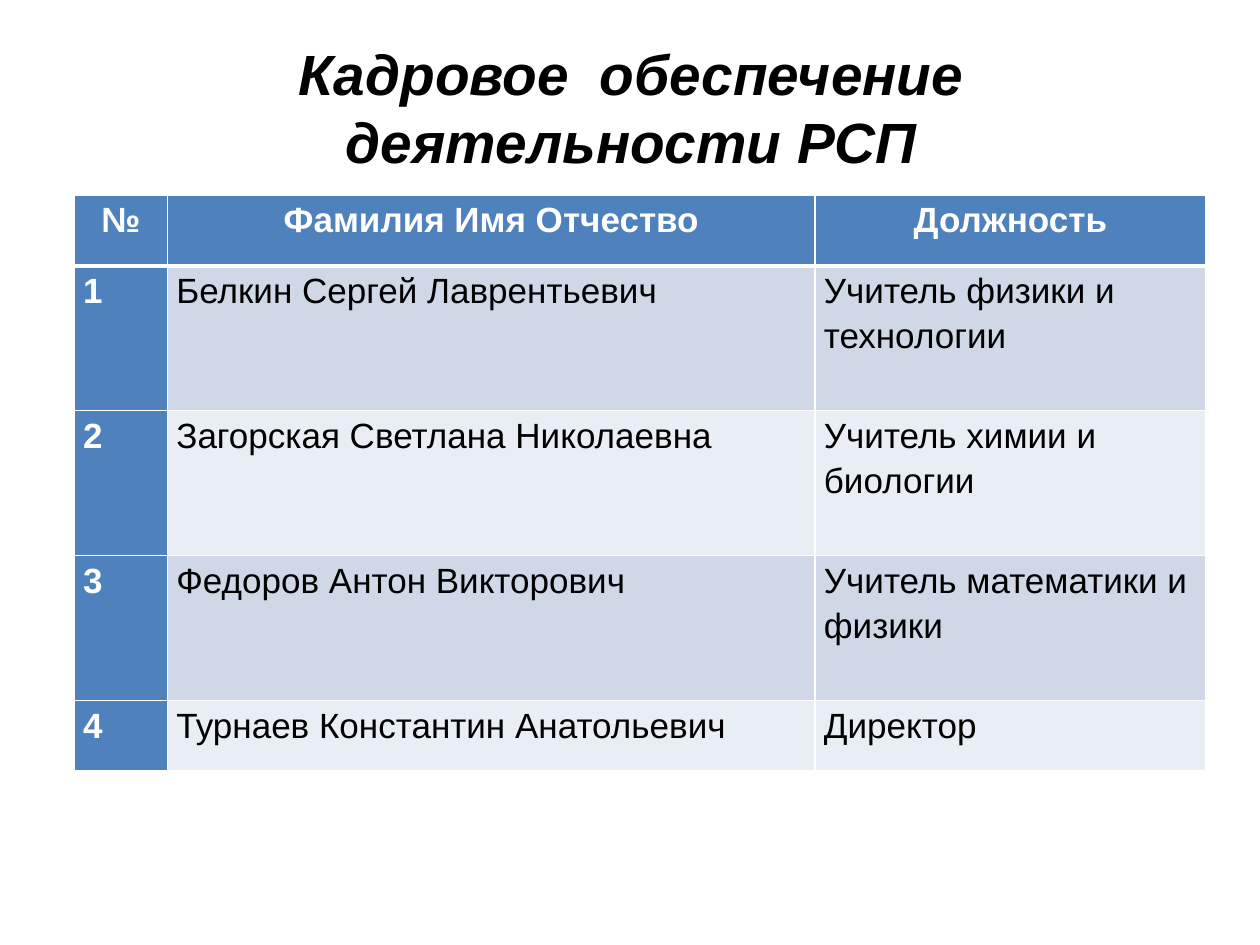
from dataclasses import dataclass
from lxml.etree import SubElement
from pptx import Presentation
from pptx.dml.color import RGBColor as RGB
from pptx.enum.text import MSO_ANCHOR as Anchor, MSO_AUTO_SIZE as Auto, PP_ALIGN as Align
from pptx.oxml.ns import qn
from pptx.util import Inches, Pt

TITLE = "Кадровое  обеспечение деятельности РСП"
ROWS = [
    ("№", "Фамилия Имя Отчество", "Должность"),
    ("1", "Белкин Сергей Лаврентьевич", "Учитель физики и технологии"),
    ("2", "Загорская Светлана Николаевна", "Учитель химии и биологии"),
    ("3", "Федоров Антон Викторович", "Учитель математики и физики"),
    ("4", "Турнаев Константин Анатольевич", "Директор"),
]
WIDTHS = (0.74, 5.14, 3.1)
SHORT, TALL = 0.56, 1.15
HEIGHTS = (SHORT, TALL, TALL, TALL, SHORT)


@dataclass(frozen=True)
class Theme:
    font: str = "Arial"
    head: float = 32.4
    body: float = 20
    ink: str = "000000"
    paper: str = "FFFFFF"
    accent: str = "4F81BD"
    bands: tuple = ("E9EDF4", "D0D8E8")
    thin: float = 1
    thick: float = 3


theme = Theme()


def style(para, size, color, bold, italic=False):
    font = para.font
    font.name, font.size = theme.font, Pt(size)
    font.bold, font.italic = bold, italic
    font.color.rgb = RGB.from_string(color)


def border(cell, side, width):
    props = cell._tc.get_or_add_tcPr()
    line = SubElement(props, qn("a:" + side), w=str(Pt(width)))
    fill = SubElement(line, qn("a:solidFill"))
    SubElement(fill, qn("a:srgbClr"), val=theme.paper)


def paint(cell, text, row, col):
    key = row == 0 or col == 0
    cell.text = text
    cell.margin_left = cell.margin_right = Inches(0.07)
    cell.margin_top = cell.margin_bottom = 0
    para = cell.text_frame.paragraphs[0]
    para.alignment = Align.CENTER if row == 0 else Align.LEFT
    para.line_spacing = 1.15
    style(para, theme.body, theme.paper if key else theme.ink, key)
    for side in ("lnL", "lnR", "lnT", "lnB"):
        heavy = (row, side) in ((0, "lnB"), (1, "lnT"))
        border(cell, side, theme.thick if heavy else theme.thin)
    cell.fill.solid()
    shade = theme.accent if key else theme.bands[row % 2]
    cell.fill.fore_color.rgb = RGB.from_string(shade)


def main():
    deck = Presentation()
    deck.slide_width, deck.slide_height = Inches(10), Inches(7.5)
    slide = deck.slides.add_slide(deck.slide_layouts[5])

    title = slide.shapes.title
    title.left, title.top = Inches(0.51), Inches(0.52)
    title.width, title.height = Inches(9), Inches(1.25)
    frame = title.text_frame
    frame.text = TITLE
    frame.word_wrap, frame.auto_size = True, Auto.NONE
    frame.vertical_anchor = Anchor.MIDDLE
    frame.margin_top, frame.margin_bottom = 0, Inches(0.6)
    para = frame.paragraphs[0]
    para.alignment = Align.CENTER
    style(para, theme.head, theme.ink, True, True)

    box = (0.59, 1.55, sum(WIDTHS), sum(HEIGHTS))
    table = slide.shapes.add_table(len(ROWS), len(WIDTHS), *map(Inches, box)).table
    for col, width in zip(table.columns, WIDTHS):
        col.width = Inches(width)
    for row, height in zip(table.rows, HEIGHTS):
        row.height = Inches(height)
    for r, texts in enumerate(ROWS):
        for c, text in enumerate(texts):
            paint(table.cell(r, c), text, r, c)

    deck.save("out.pptx")


if __name__ == "__main__":
    main()
